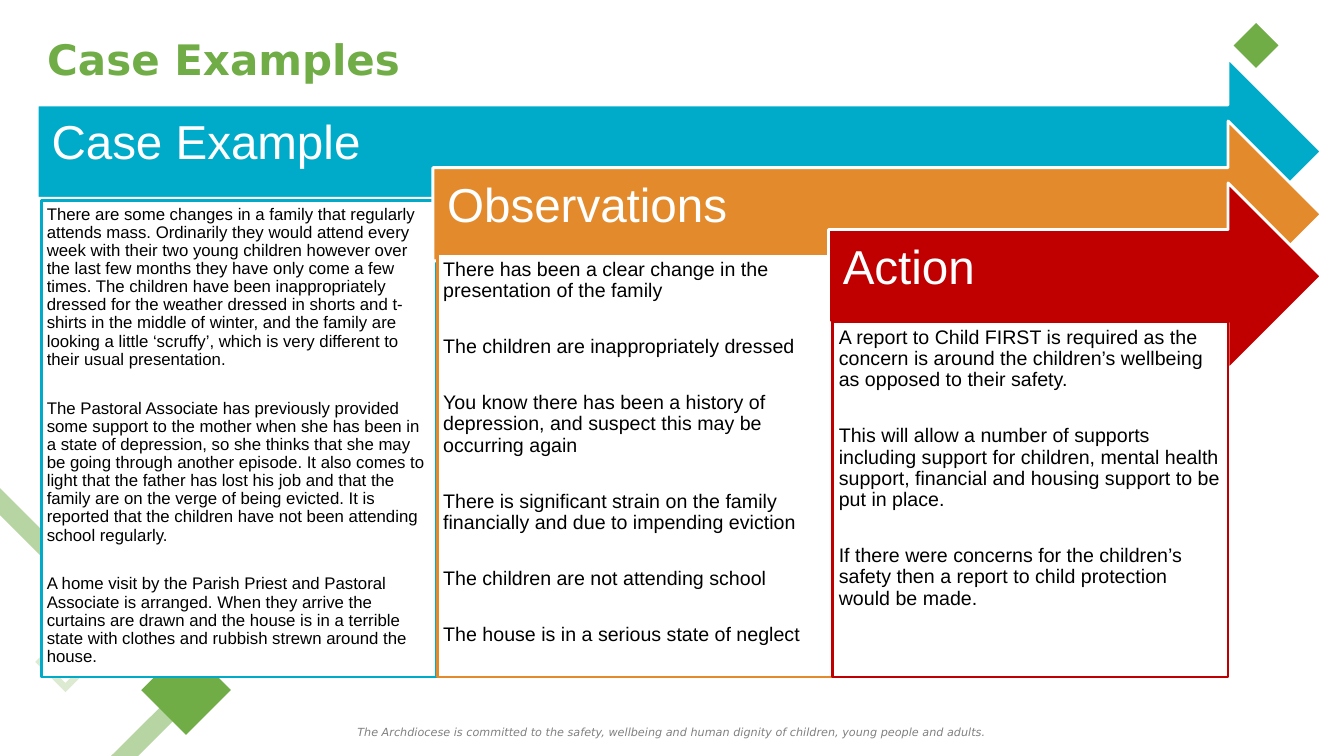
from lxml import etree
from pptx import Presentation
from pptx.dml.color import RGBColor
from pptx.enum.shapes import MSO_SHAPE
from pptx.enum.text import MSO_ANCHOR, MSO_AUTO_SIZE, PP_ALIGN
from pptx.oxml.ns import qn
from pptx.util import Cm, Pt

ARROW, RECT, GEM = MSO_SHAPE.RIGHT_ARROW, MSO_SHAPE.RECTANGLE, MSO_SHAPE.DIAMOND
TOP, MID = MSO_ANCHOR.TOP, MSO_ANCHOR.MIDDLE
LEFT, MIDDLE = PP_ALIGN.LEFT, PP_ALIGN.CENTER
FIXED = MSO_AUTO_SIZE.NONE

GREEN = RGBColor(0x70, 0xAD, 0x46)
BLUE = RGBColor(0x00, 0xAB, 0xCA)
AMBER = RGBColor(0xE3, 0x8B, 0x2C)
RED = RGBColor(0xC0, 0x00, 0x00)
WHITE = RGBColor(0xFF, 0xFF, 0xFF)
BLACK = RGBColor(0x00, 0x00, 0x00)
GREY = RGBColor(0x80, 0x80, 0x80)

WIDE, HIGH = 33.87, 19.05
STEP, RIGHT, BASE = 9.97, 33.3, 17.06

STAGES = [
    ("Case Example", BLUE, 1.47, 5.05, 12, 22, 0.13, [
        "There are some changes in a family that regularly attends mass. Ordinarily they would attend every "
        "week with their two young children however over the last few months they have only come a few times. "
        "The children have been inappropriately dressed for the weather dressed in shorts and t-shirts in the "
        "middle of winter, and the family are looking a little ‘scruffy’, which is very different to their "
        "usual presentation.",
        "The Pastoral Associate has previously provided some support to the mother when she has been in a "
        "state of depression, so she thinks that she may be going through another episode. It also comes to "
        "light that the father has lost his job and that the family are on the verge of being evicted. It is "
        "reported that the children have not been attending school regularly.",
        "A home visit by the Parish Priest and Pastoral Associate is arranged. When they arrive the curtains "
        "are drawn and the house is in a terrible state with clothes and rubbish strewn around the house.",
    ]),
    ("Observations", AMBER, 3.05, 6.38, 14, 25, 0.15, [
        "There has been a clear change in the presentation of the family",
        "The children are inappropriately dressed",
        "You know there has been a history of depression, and suspect this may be occurring again",
        "There is significant strain on the family financially and due to impending eviction",
        "The children are not attending school",
        "The house is in a serious state of neglect",
    ]),
    ("Action", RED, 4.61, 8.1, 14, 25, 0.15, [
        "A report to Child FIRST is required as the concern is around the children’s wellbeing as opposed to "
        "their safety.",
        "This will allow a number of supports including support for children, mental health support, "
        "financial and housing support to be put in place.",
        "If there were concerns for the children’s safety then a report to child protection would be made.",
    ]),
]


def write(frame, *text, size, color, face="Arial", bold=False, slant=False,
          align=LEFT, anchor=TOP, pad=(0.25, 0.13, 0.25, 0.13), lead=0.9, gap=0):
    frame.word_wrap = True
    frame.auto_size = FIXED
    frame.vertical_anchor = anchor
    frame.margin_left, frame.margin_top, frame.margin_right, frame.margin_bottom = map(Cm, pad)
    for num, line in enumerate(text):
        para = frame.add_paragraph() if num else frame.paragraphs[0]
        para.text = line
        para.alignment = align
        para.line_spacing = lead
        para.space_before = Pt(gap if num else 0)
        font = para.runs[0].font
        font.name, font.size = face, Pt(size)
        font.bold, font.italic = bold, slant
        font.color.rgb = color


class Deck:
    face = "DejaVu Sans"

    def __init__(self):
        self.show = Presentation()
        self.show.slide_width, self.show.slide_height = Cm(WIDE), Cm(HIGH)
        self.slide = self.show.slides.add_slide(self.show.slide_layouts[5])

    def paint(self, shape, fill, line=None, alpha=100):
        shape.shadow.inherit = False
        shape.fill.solid()
        shape.fill.fore_color.rgb = fill
        if line is None:
            shape.line.fill.background()
        else:
            shape.line.color.rgb = line
            shape.line.width = Pt(2)
        if alpha < 100:
            tint = shape.element.spPr.find(qn("a:solidFill"))[0]
            etree.SubElement(tint, qn("a:alpha"), val=str(alpha * 1000))
        return shape

    def block(self, kind, x, y, wide, high, fill, line=None):
        shape = self.slide.shapes.add_shape(kind, Cm(x), Cm(y), Cm(wide), Cm(high))
        return self.paint(shape, fill, line)

    def outline(self, loops, alpha):
        loops = [[(Cm(x), Cm(y)) for x, y in loop] for loop in loops]
        pen = self.slide.shapes.build_freeform(*loops[0][0])
        for num, loop in enumerate(loops):
            if num:
                pen.move_to(*loop[0])
            pen.add_line_segments(loop[1:], close=True)
        self.paint(pen.convert_to_shape(), GREEN, alpha=alpha)

    def title(self, text):
        head = self.slide.shapes.title
        head.left, head.top, head.width, head.height = Cm(0.94), Cm(0.18), Cm(30.48), Cm(2.59)
        write(head.text_frame, text, size=30, color=GREEN, face=self.face,
              bold=True, anchor=MID, lead=1)

    def footer(self, text):
        box = self.slide.shapes.add_textbox(0, Cm(18.14), Cm(WIDE), Cm(0.6))
        write(box.text_frame, text, size=8, color=GREY, face=self.face,
              slant=True, align=MIDDLE, lead=1)

    def stage(self, num, name, color, top, start, size, gap, pad, notes):
        x = 0.94 + num * STEP
        arrow = self.block(ARROW, x, top, RIGHT - x, 4.7, color, WHITE)
        write(arrow.text_frame, name, size=34, color=WHITE, anchor=MID,
              pad=(0.36, 0.36, 0.71, 0.74))
        panel = self.block(RECT, x + 0.11, start, 9.96, BASE - start, WHITE, color)
        write(panel.text_frame, *notes, size=size, color=BLACK, pad=[pad] * 4, gap=gap)


def gem(x, y, half):
    return [(x, y - half), (x + half, y), (x, y + half), (x - half, y)]


def main():
    deck = Deck()
    deck.footer("The Archdiocese is committed to the safety, wellbeing and human dignity "
                "of children, young people and adults.")
    deck.outline([gem(1.65, 16.68, 0.53), gem(1.65, 16.68, 0.76)], 25)
    deck.block(GEM, 3.56, 16.26, 2.26, 2.26, GREEN)
    deck.block(GEM, 31.09, 0.58, 1.13, 1.13, GREEN)
    deck.outline([[(0, 12.3), (0, 12.98), (4.44, 17.42), (2.8, HIGH), (3.48, HIGH), (5.11, 17.42)]], 50)
    deck.title("Case Examples")
    for num, stage in enumerate(STAGES):
        deck.stage(num, *stage)
    deck.show.save("out.pptx")


if __name__ == "__main__":
    main()
